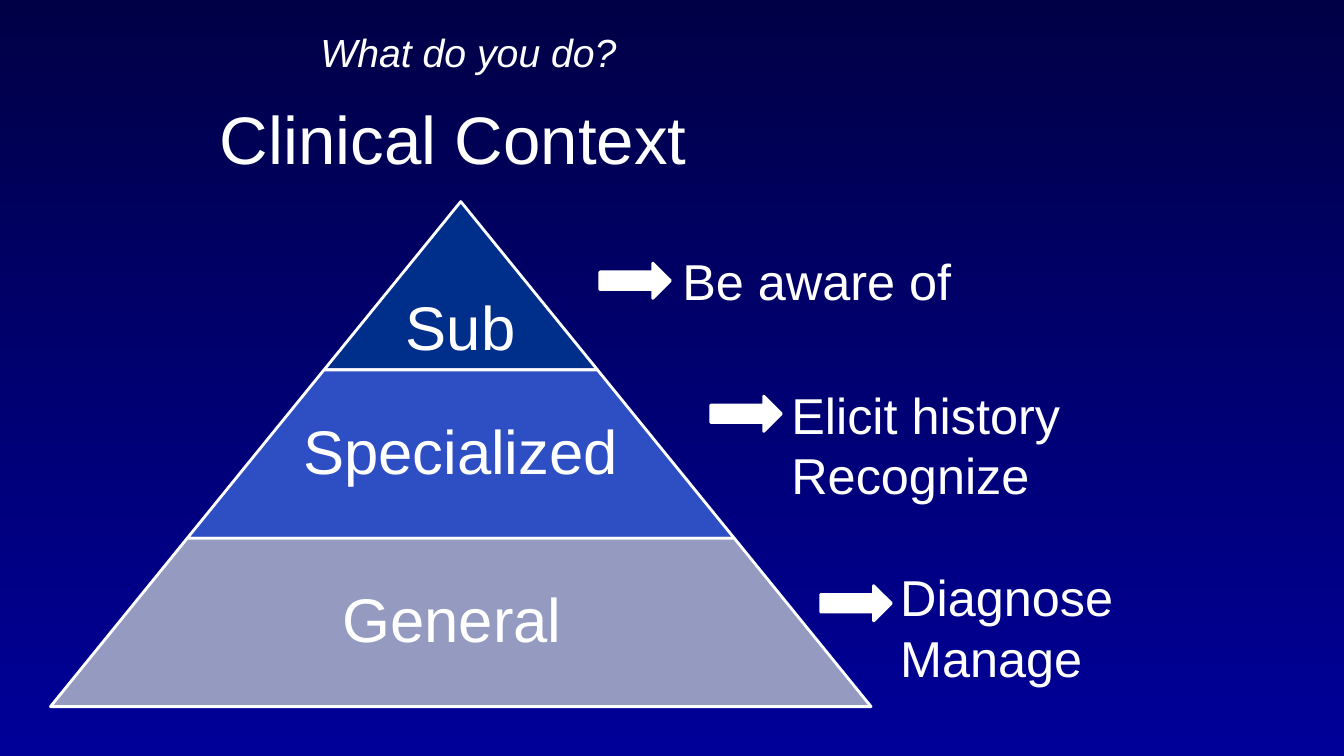
from dataclasses import dataclass

import pptx
import pptx.dml.color
import pptx.enum.shapes
import pptx.enum.text
import pptx.shapes.autoshape
import pptx.slide
import pptx.text.text
import pptx.util

Inches = pptx.util.Inches
Anchor = pptx.enum.text.MSO_ANCHOR
Align = pptx.enum.text.PP_ALIGN
Preset = pptx.enum.shapes.MSO_SHAPE

COLORS = {
    "background_top": "000047",
    "background_bottom": "000099",
    "sub": "002E8B",
    "specialized": "2D4FC3",
    "general": "959BC0",
    "white": "FFFFFF",
}
FONT = "Arial"
PYRAMID_CENTER = 4.57
PYRAMID_TOP = 2.0
TIER_HEIGHT = 1.67
TIER_WIDTH_STEP = 2.713
LABEL_WIDTH = 4.0
LABEL_INSET = 0.06
ARROW_SIZE = (0.7, 0.35)


@dataclass(frozen=True)
class Tier:
    label: str
    color: str
    anchor: Anchor


@dataclass(frozen=True)
class Callout:
    lines: tuple[str, ...]
    left: float
    top: float
    width: float
    height: float
    arrow_left: float
    arrow_top: float


TIERS = (
    Tier("Sub", "sub", Anchor.BOTTOM),
    Tier("Specialized", "specialized", Anchor.MIDDLE),
    Tier("General ", "general", Anchor.MIDDLE),
)
CALLOUTS = (
    Callout(("Be aware of",), 6.67, 2.43, 5.0, 0.71, 5.95, 2.61),
    Callout(("Elicit history", "Recognize"), 7.75, 3.76, 3.58, 1.31, 7.05, 3.93),
    Callout(("Diagnose", "Manage"), 8.83, 5.57, 4.3, 1.31, 8.14, 5.81),
)


def rgb(name: str) -> pptx.dml.color.RGBColor:
    return pptx.dml.color.RGBColor.from_string(COLORS[name])


def write_lines(frame: pptx.text.text.TextFrame, lines: tuple[str, ...], size: int,
                align: Align = Align.LEFT, italic: bool = False) -> None:
    frame.word_wrap = True
    frame.auto_size = pptx.enum.text.MSO_AUTO_SIZE.NONE
    for index, line in enumerate(lines):
        paragraph = frame.add_paragraph() if index else frame.paragraphs[0]
        paragraph.alignment = align
        run = paragraph.add_run()
        run.text = line
        run.font.name = FONT
        run.font.size = pptx.util.Pt(size)
        run.font.italic = italic
        run.font.color.rgb = rgb("white")


def add_text(slide: pptx.slide.Slide, left: float, top: float, width: float,
             height: float) -> pptx.text.text.TextFrame:
    box = slide.shapes.add_textbox(Inches(left), Inches(top), Inches(width), Inches(height))
    return box.text_frame


def add_outlined_shape(slide: pptx.slide.Slide, preset: Preset, left: float, top: float,
                       width: float, height: float,
                       color: str) -> pptx.shapes.autoshape.Shape:
    shape = slide.shapes.add_shape(
        preset, Inches(left), Inches(top), Inches(width), Inches(height))
    shape.shadow.inherit = False
    shape.fill.solid()
    shape.fill.fore_color.rgb = rgb(color)
    shape.line.color.rgb = rgb("white")
    shape.line.width = pptx.util.Pt(2)
    return shape


def add_tier(slide: pptx.slide.Slide, tier: Tier, level: int) -> None:
    """Draw one band of the pyramid; level 0 is the tip."""
    width = TIER_WIDTH_STEP * (level + 1)
    top = PYRAMID_TOP + TIER_HEIGHT * level
    band = add_outlined_shape(slide, Preset.TRAPEZOID, PYRAMID_CENTER - width / 2, top,
                              width, TIER_HEIGHT, tier.color)
    band.adjustments[0] = TIER_WIDTH_STEP / 2 / TIER_HEIGHT

    frame = add_text(slide, PYRAMID_CENTER - LABEL_WIDTH / 2, top, LABEL_WIDTH, TIER_HEIGHT)
    frame.margin_left = frame.margin_right = Inches(LABEL_INSET)
    frame.margin_top = frame.margin_bottom = Inches(LABEL_INSET)
    frame.vertical_anchor = tier.anchor
    write_lines(frame, (tier.label,), 44, Align.CENTER)
    frame.paragraphs[0].line_spacing = 0.9


def add_callout(slide: pptx.slide.Slide, callout: Callout) -> None:
    add_outlined_shape(slide, Preset.RIGHT_ARROW, callout.arrow_left, callout.arrow_top,
                       *ARROW_SIZE, "white")
    frame = add_text(slide, callout.left, callout.top, callout.width, callout.height)
    write_lines(frame, callout.lines, 36)


def set_background(slide: pptx.slide.Slide) -> None:
    fill = slide.background.fill
    fill.gradient()
    fill.gradient_angle = 270
    for stop, name in zip(fill.gradient_stops, ("background_top", "background_bottom")):
        stop.color.rgb = rgb(name)


def add_title(slide: pptx.slide.Slide) -> None:
    title = slide.shapes.title
    title.left, title.top = Inches(2.08), Inches(0.92)
    title.width, title.height = Inches(6), Inches(0.91)
    title.text_frame.vertical_anchor = Anchor.TOP
    write_lines(title.text_frame, ("Clinical Context",), 48)


def main() -> None:
    presentation = pptx.Presentation()
    presentation.slide_width = Inches(13.33)
    presentation.slide_height = Inches(7.5)
    slide = presentation.slides.add_slide(presentation.slide_layouts.get_by_name("Title Only"))
    set_background(slide)
    add_title(slide)
    for level, tier in enumerate(TIERS):
        add_tier(slide, tier, level)
    for callout in CALLOUTS:
        add_callout(slide, callout)
    write_lines(add_text(slide, 3.08, 0.23, 7.67, 0.57), ("What do you do?",), 28, italic=True)
    presentation.save("out.pptx")


if __name__ == "__main__":
    main()
